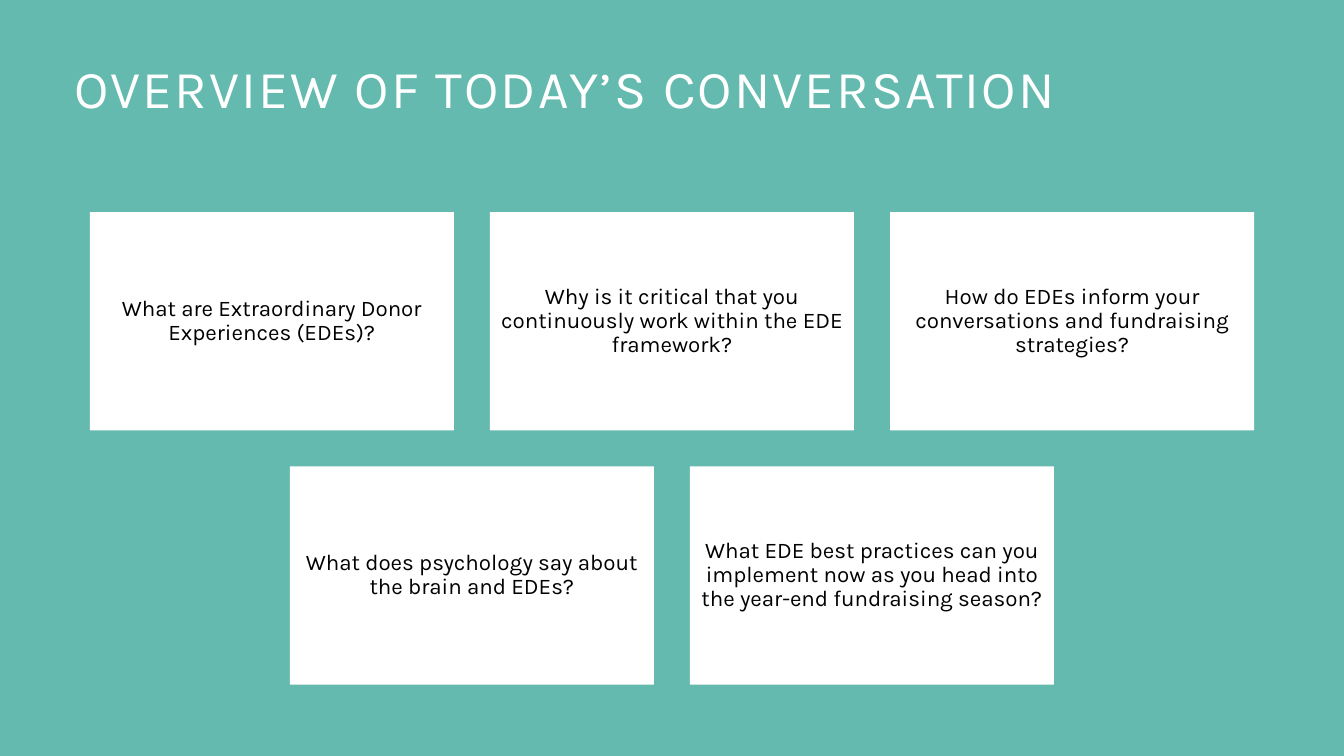
import pptx
import pptx.util
import pptx.dml.color
import pptx.enum.shapes
import pptx.enum.text

Pt = pptx.util.Pt
ALIGN = pptx.enum.text.PP_ALIGN
ANCHOR = pptx.enum.text.MSO_ANCHOR

TITLE = "OVERVIEW OF TODAY’S CONVERSATION"
ROWS = [
    [
        "What are Extraordinary Donor Experiences (EDEs)?",
        "Why is it critical that you continuously work within the EDE framework?",
        "How do EDEs inform your conversations and fundraising strategies?",
    ],
    [
        "What does psychology say about the brain and EDEs?",
        "What EDE best practices can you implement now as you head into "
        "the year-end fundraising season?",
    ],
]
TEAL, WHITE, BLACK = "65BAAF", "FFFFFF", "000000"
WIDE, HIGH = 960, 540
CARD_W, CARD_H, GAP, TOP = 260, 155.8, 25.8, 151.6
INSET = Pt(5)
HEAD_FRAME = {
    "word_wrap": True,
    "auto_size": pptx.enum.text.MSO_AUTO_SIZE.NONE,
    "vertical_anchor": ANCHOR.TOP,
    "margin_top": 0,
}
CARD_FRAME = {
    "word_wrap": True,
    "vertical_anchor": ANCHOR.MIDDLE,
    "margin_left": INSET,
    "margin_right": INSET,
    "margin_top": INSET,
    "margin_bottom": INSET,
}


def paint(target, color):
    target.rgb = pptx.dml.color.RGBColor.from_string(color)


def apply(target, values):
    for name, value in values.items():
        setattr(target, name, value)


def write(shape, text, frame, align, size, color):
    apply(shape.text_frame, frame)
    para = shape.text_frame.paragraphs[0]
    apply(para, {"alignment": align, "line_spacing": 0.9})
    run = para.add_run()
    run.text = text
    apply(run.font, {"name": "Karla", "size": Pt(size)})
    paint(run.font.color, color)
    return run


def add_head(slide):
    head = slide.shapes.title
    apply(head, {"left": Pt(46), "top": Pt(45), "width": Pt(846), "height": Pt(73.4)})
    run = write(head, TITLE, HEAD_FRAME, ALIGN.LEFT, 38, WHITE)
    run.font._element.set("spc", "150")


def add_card(slide, left, top, text):
    card = slide.shapes.add_shape(
        pptx.enum.shapes.MSO_SHAPE.RECTANGLE,
        Pt(left), Pt(top), Pt(CARD_W), Pt(CARD_H),
    )
    card.shadow.inherit = False
    card.fill.solid()
    paint(card.fill.fore_color, WHITE)
    card.line.fill.background()
    write(card, text, CARD_FRAME, ALIGN.CENTER, 16, BLACK)


def main():
    deck = pptx.Presentation()
    apply(deck, {"slide_width": Pt(WIDE), "slide_height": Pt(HIGH)})
    slide = deck.slides.add_slide(deck.slide_layouts[5])
    slide.background.fill.solid()
    paint(slide.background.fill.fore_color, TEAL)
    add_head(slide)
    for row, texts in enumerate(ROWS):
        span = len(texts) * (CARD_W + GAP) - GAP
        start = (WIDE - span) / 2
        for col, text in enumerate(texts):
            left = start + col * (CARD_W + GAP)
            add_card(slide, left, TOP + row * (CARD_H + GAP), text)
    deck.save("out.pptx")


if __name__ == "__main__":
    main()
